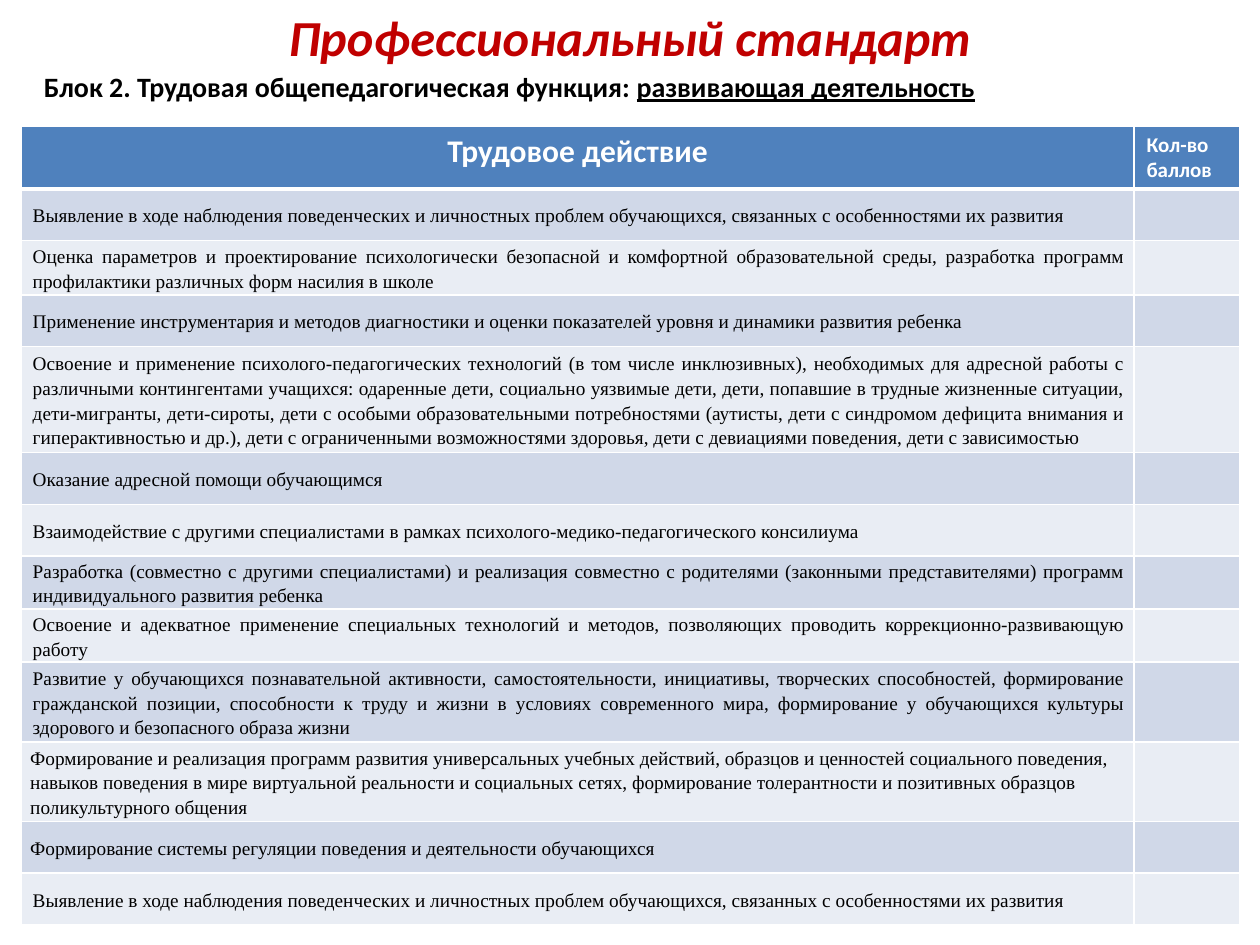
from lxml.etree import SubElement
from pptx import Presentation
from pptx.dml.color import RGBColor
from pptx.enum.text import MSO_ANCHOR as Anchor, PP_ALIGN as Align
from pptx.oxml.ns import qn
from pptx.util import Inches, Pt

WHITE, BLACK, RED, BLUE = "FFFFFF", "000000", "C00000", "4F81BD"
BANDS = "D0D8E8", "E9EDF4"
WIDTHS = 8.83, 0.84
HEAD = 0.5

# Row height, justified or not, text
ROWS = [
    (0.41, True, "Выявление в ходе наблюдения поведенческих и личностных проблем обучающихся, связанных с особенностями их развития"),
    (0.43, True, "Оценка параметров и проектирование психологически безопасной и комфортной образовательной среды, разработка программ профилактики различных форм насилия в школе"),
    (0.41, True, "Применение инструментария и методов диагностики и оценки показателей уровня и динамики развития ребенка"),
    (0.78, True, "Освоение и применение психолого-педагогических технологий (в том числе инклюзивных), необходимых для адресной работы с различными контингентами учащихся: одаренные дети, социально уязвимые дети, дети, попавшие в трудные жизненные ситуации, дети-мигранты, дети-сироты, дети с особыми образовательными потребностями (аутисты, дети с синдромом дефицита внимания и гиперактивностью и др.), дети с ограниченными возможностями здоровья, дети с девиациями поведения, дети с зависимостью"),
    (0.41, True, "Оказание адресной помощи обучающимся"),
    (0.41, True, "Взаимодействие с другими специалистами в рамках психолого-медико-педагогического консилиума"),
    (0.41, True, "Разработка (совместно с другими специалистами) и реализация совместно с родителями (законными представителями) программ индивидуального развития ребенка"),
    (0.41, True, "Освоение и адекватное применение специальных технологий и методов, позволяющих проводить коррекционно-развивающую работу"),
    (0.58, True, "Развитие у обучающихся познавательной активности, самостоятельности, инициативы, творческих способностей, формирование гражданской позиции, способности к труду и жизни в условиях современного мира, формирование у обучающихся культуры здорового и безопасного образа жизни"),
    (0.58, False, "Формирование и реализация программ развития универсальных учебных действий, образцов и ценностей социального поведения, навыков поведения в мире виртуальной реальности и социальных сетях, формирование толерантности и позитивных образцов поликультурного общения"),
    (0.41, False, "Формирование системы регуляции поведения и деятельности обучающихся"),
    (0.41, True, "Выявление в ходе наблюдения поведенческих и личностных проблем обучающихся, связанных с особенностями их развития"),
]


def color(code):
    return RGBColor.from_string(code)


def style(para, size, code, name="Calibri", bold=True, align=Align.LEFT):
    font = para.font
    font.name, font.size, font.bold = name, Pt(size), bold
    font.color.rgb = color(code)
    para.alignment = align


def add_text(slide, left, top, width, height, anchor):
    box = slide.shapes.add_textbox(*map(Inches, (left, top, width, height)))
    frame = box.text_frame
    frame.word_wrap = True
    frame.vertical_anchor = anchor
    return frame.paragraphs[0]


def paint(cell, code, above=1, below=1):
    # Borders come before the fill in the cell's XML
    props = cell._tc.get_or_add_tcPr()
    for side, size in zip("LRTB", (1, 1, above, below)):
        line = SubElement(props, qn(f"a:ln{side}"), w=str(Pt(size)))
        fill = SubElement(line, qn("a:solidFill"))
        SubElement(fill, qn("a:srgbClr"), val=WHITE)
    cell.fill.solid()
    cell.fill.fore_color.rgb = color(code)


def fill_head(table):
    heads = (("Трудовое действие", 18, Align.CENTER),
             ("Кол-во баллов", 12, Align.LEFT))
    for col, (text, size, align) in enumerate(heads):
        cell = table.cell(0, col)
        cell.text = text
        style(cell.text_frame.paragraphs[0], size, WHITE, align=align)
        paint(cell, BLUE, below=3)


def fill_row(table, row, justify, text):
    cell = table.cell(row, 0)
    cell.text = text
    cell.vertical_anchor = Anchor.MIDDLE
    cell.margin_left = cell.margin_right = Inches(0.07)
    cell.margin_top = cell.margin_bottom = 0
    para = cell.text_frame.paragraphs[0]
    style(para, 11, BLACK, "Times New Roman", False,
          Align.JUSTIFY if justify else Align.LEFT)
    para.line_spacing = 1.15
    if justify:
        para._p.get_or_add_pPr().set("marL", str(Inches(0.02)))
    for col in range(len(WIDTHS)):
        paint(table.cell(row, col), BANDS[(row - 1) % 2],
              above=3 if row == 1 else 1)


def add_grid(slide):
    highs = [HEAD] + [high for high, _, _ in ROWS]
    table = slide.shapes.add_table(
        len(highs), len(WIDTHS), Inches(0.17), Inches(1),
        Inches(sum(WIDTHS)), Inches(sum(highs))).table
    for col, width in zip(table.columns, WIDTHS):
        col.width = Inches(width)
    for row, high in zip(table.rows, highs):
        row.height = Inches(high)
    fill_head(table)
    for row, (_, justify, text) in enumerate(ROWS, 1):
        fill_row(table, row, justify, text)


def main():
    deck = Presentation()
    deck.slide_width, deck.slide_height = Inches(10), Inches(7.5)
    slide = deck.slides.add_slide(deck.slide_layouts[6])

    # Title
    title = add_text(slide, 0.5, 0.08, 9, 0.42, Anchor.MIDDLE)
    title.text = "Профессиональный стандарт"
    style(title, 28.8, RED, align=Align.CENTER)
    title.font.italic = True

    # Block heading
    block = add_text(slide, 0.25, 0.5, 9.67, 0.45, Anchor.TOP)
    block.add_run().text = "Блок 2. Трудовая общепедагогическая функция: "
    topic = block.add_run()
    topic.text = "развивающая деятельность"
    topic.font.underline = True
    style(block, 16, BLACK)
    block.space_before = Pt(3.2)

    # Score table
    add_grid(slide)
    deck.save("out.pptx")


if __name__ == "__main__":
    main()
